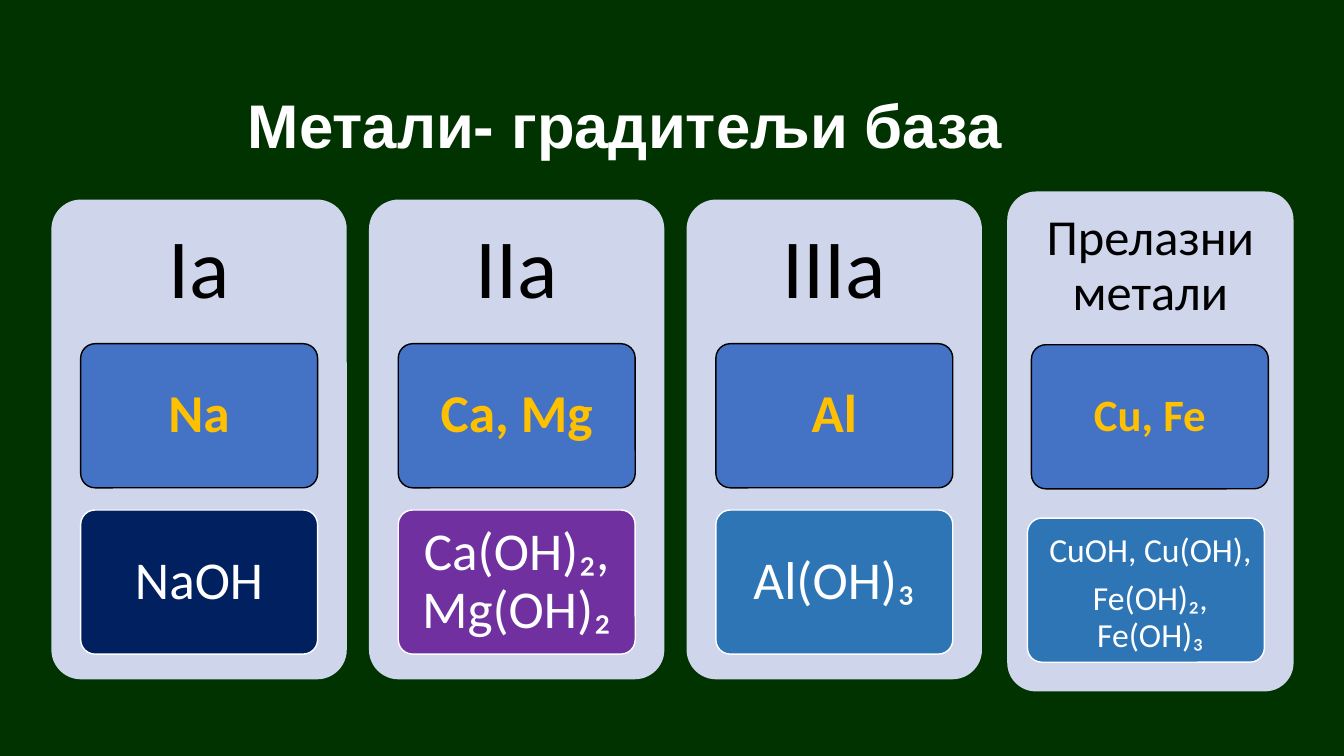
from pptx import Presentation
from pptx.util import Inches, Pt
from pptx.dml.color import RGBColor
from pptx.enum.shapes import MSO_SHAPE as Shape
from pptx.enum.text import MSO_ANCHOR as Anchor, PP_ALIGN as Align

TITLE = "Метали- градитељи база"
BACK, PANEL, METAL = "003300", "CFD5EA", "4472C4"
WHITE, BLACK, GOLD = "FFFFFF", "000000", "FFC000"

# Group name, metals, bases, fill of the base card
GROUPS = [
    ("Ia", "Na", "NaOH", "002060"),
    ("IIa", "Ca, Mg", "Ca(OH)₂, Mg(OH)₂", "7030A0"),
    ("IIIa", "Al", "Al(OH)₃", "2E75B6"),
]
LAST = ("Прелазни метали", "Cu, Fe", "CuOH, Cu(OH),\nFe(OH)₂, Fe(OH)₃", "2E75B6")

LEFT, TOP, STEP = 0.51, 1.98, 3.15
WIDE, TALL = 2.93, 4.76
CARD_W, CARD_H = 2.35, 1.43
HEAD = 0.3  # share of a panel taken by its heading


def color(code):
    """Turn a hex string into a colour."""
    return RGBColor.from_string(code)


def write(shape, text, size, ink=WHITE, bold=False, font="Calibri",
          align=Align.CENTER, pad=(0.07, 0.04, 0.07, 0.04), after=0.35):
    """Fill a shape with formatted text, one paragraph a line."""
    frame = shape.text_frame
    frame.word_wrap = True
    frame.vertical_anchor = Anchor.MIDDLE
    (frame.margin_left, frame.margin_top,
     frame.margin_right, frame.margin_bottom) = map(Inches, pad)
    for i, line in enumerate(text.split("\n")):
        para = frame.add_paragraph() if i else frame.paragraphs[0]
        para.alignment, para.line_spacing = align, 0.9
        para.space_after = Pt(size * after)
        run = para.add_run()
        run.text = line
        run.font.size, run.font.bold, run.font.name = Pt(size), bold, font
        run.font.color.rgb = color(ink)


def label(box, text, size, **style):
    """Add a text box."""
    write(slide.shapes.add_textbox(*map(Inches, box)), text, size, **style)


def card(box, fill, edge=None):
    """Add a rounded box with an optional outline."""
    shape = slide.shapes.add_shape(Shape.ROUNDED_RECTANGLE, *map(Inches, box))
    shape.adjustments[0] = 0.1
    shape.shadow.inherit = False
    shape.fill.solid()
    shape.fill.fore_color.rgb = color(fill)
    if edge:
        shape.line.color.rgb = color(edge)
        shape.line.width = Pt(1)
    else:
        shape.line.fill.background()
    return shape


def column(group, panel, metal, base, sizes, inset, base_pad):
    """Add a panel with its heading, metal card and base card."""
    name, metals, bases, fill = group
    x, y, w, h = panel
    card(panel, PANEL)
    label((x, y, w, h * HEAD), name, sizes[0], ink=BLACK, pad=(inset,) * 4)
    write(card((*metal, CARD_W, CARD_H), METAL, BLACK), metals, sizes[1],
          ink=GOLD, bold=True)
    write(card((*base, CARD_W, CARD_H), fill, WHITE), bases, sizes[2],
          pad=base_pad)


deck = Presentation()
deck.slide_width, deck.slide_height = Inches(13.33), Inches(7.5)
slide = deck.slides.add_slide(deck.slide_layouts[6])
slide.background.fill.solid()
slide.background.fill.fore_color.rgb = color(BACK)

label((2.36, 0.55, 8.61, 1.45), TITLE, 44, bold=True, font="Arial",
      align=Align.LEFT, pad=(0.1, 0.05, 0.1, 0.05), after=0)

for i, group in enumerate(GROUPS):
    x = LEFT + i * STEP
    inner = x + (WIDE - CARD_W) / 2
    column(group, (x, TOP, WIDE, TALL), (inner, 3.41), (inner, 5.06),
           (60, 38, 38), 0.25, (0.07, 0.04, 0.07, 0.04))

column(LAST, (9.99, 1.9, 2.84, 4.96), (10.23, 3.42), (10.19, 5.14),
       (36, 32, 24), 0.15, (0.12, 0.09, 0.03, 0.01))

deck.save("out.pptx")
